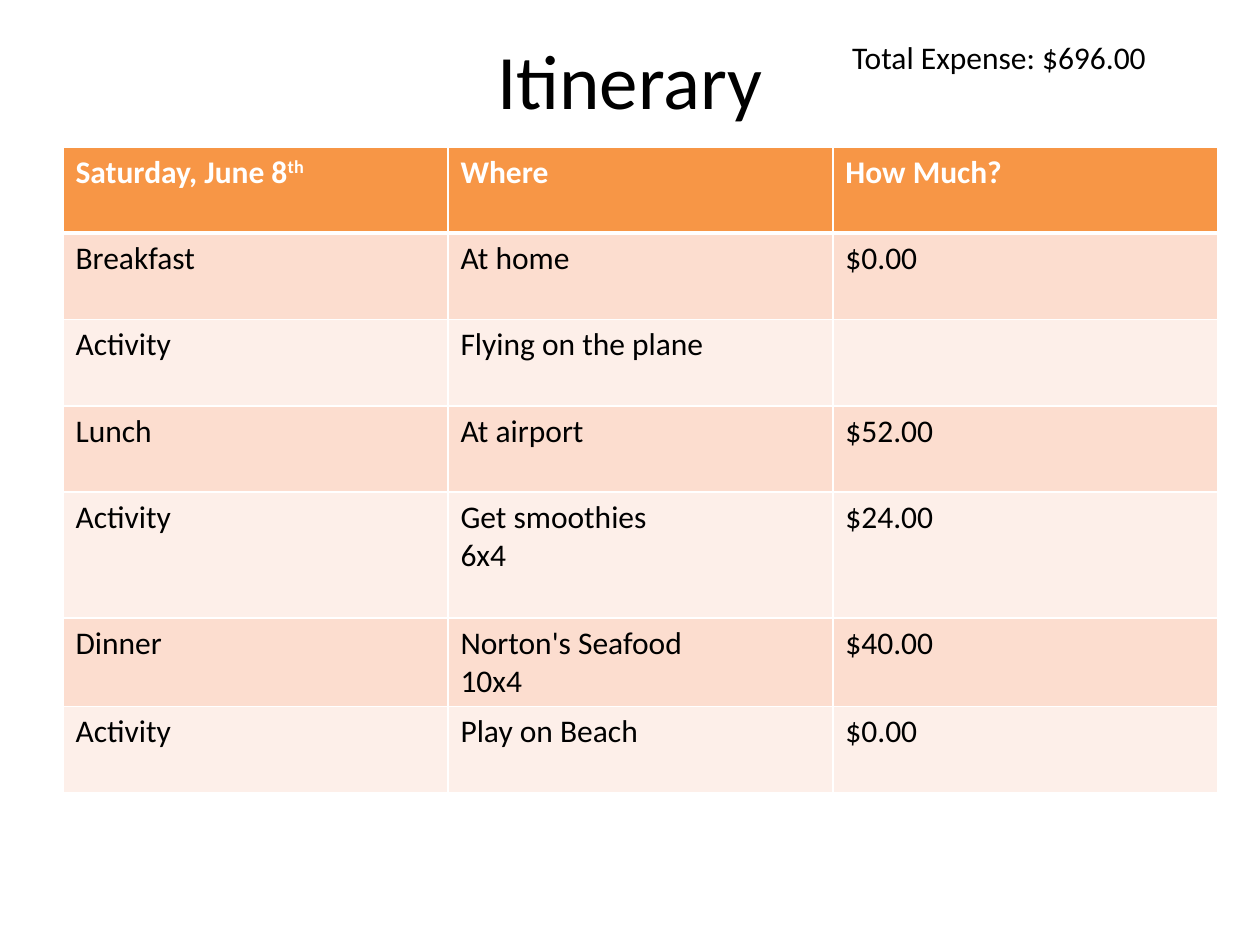
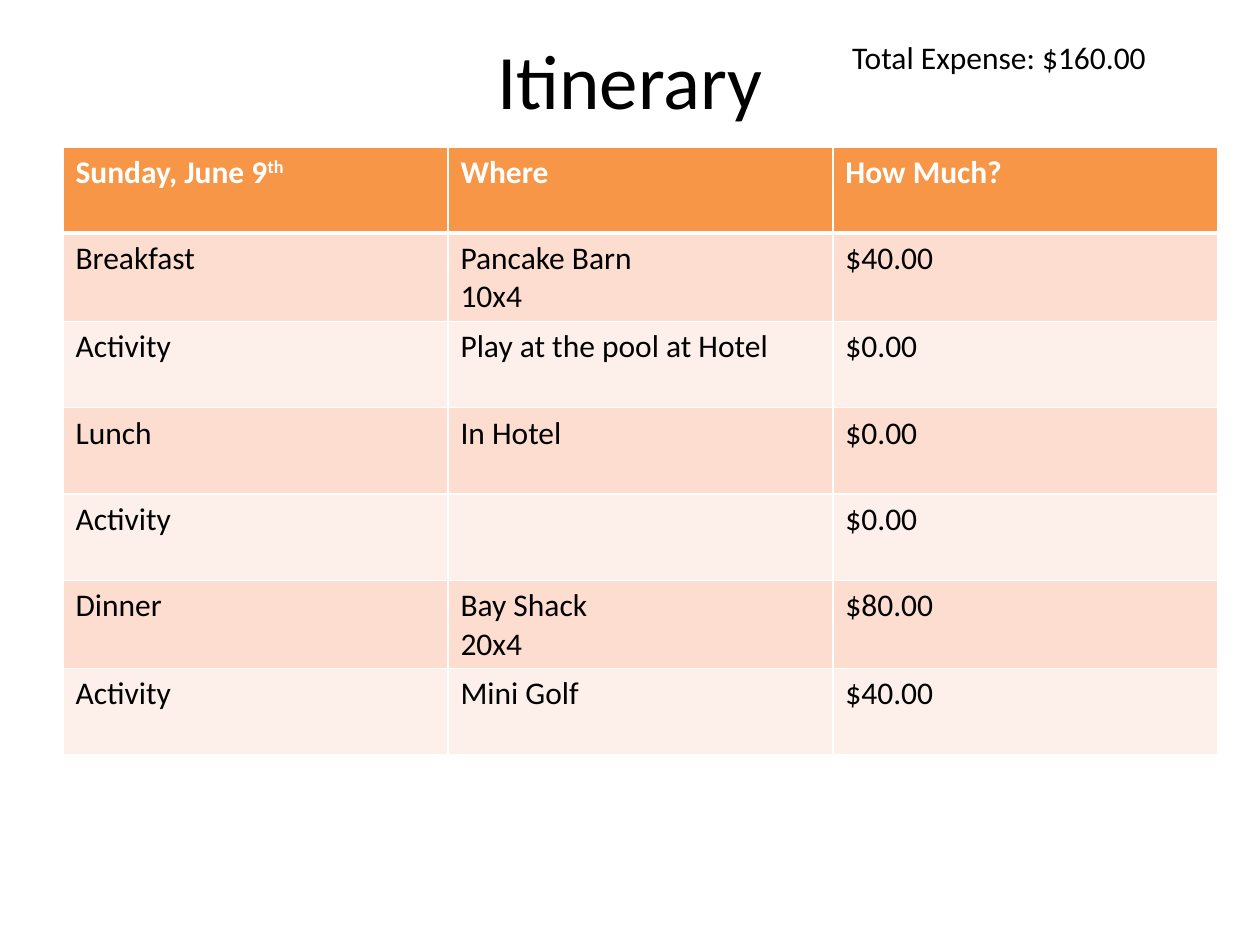
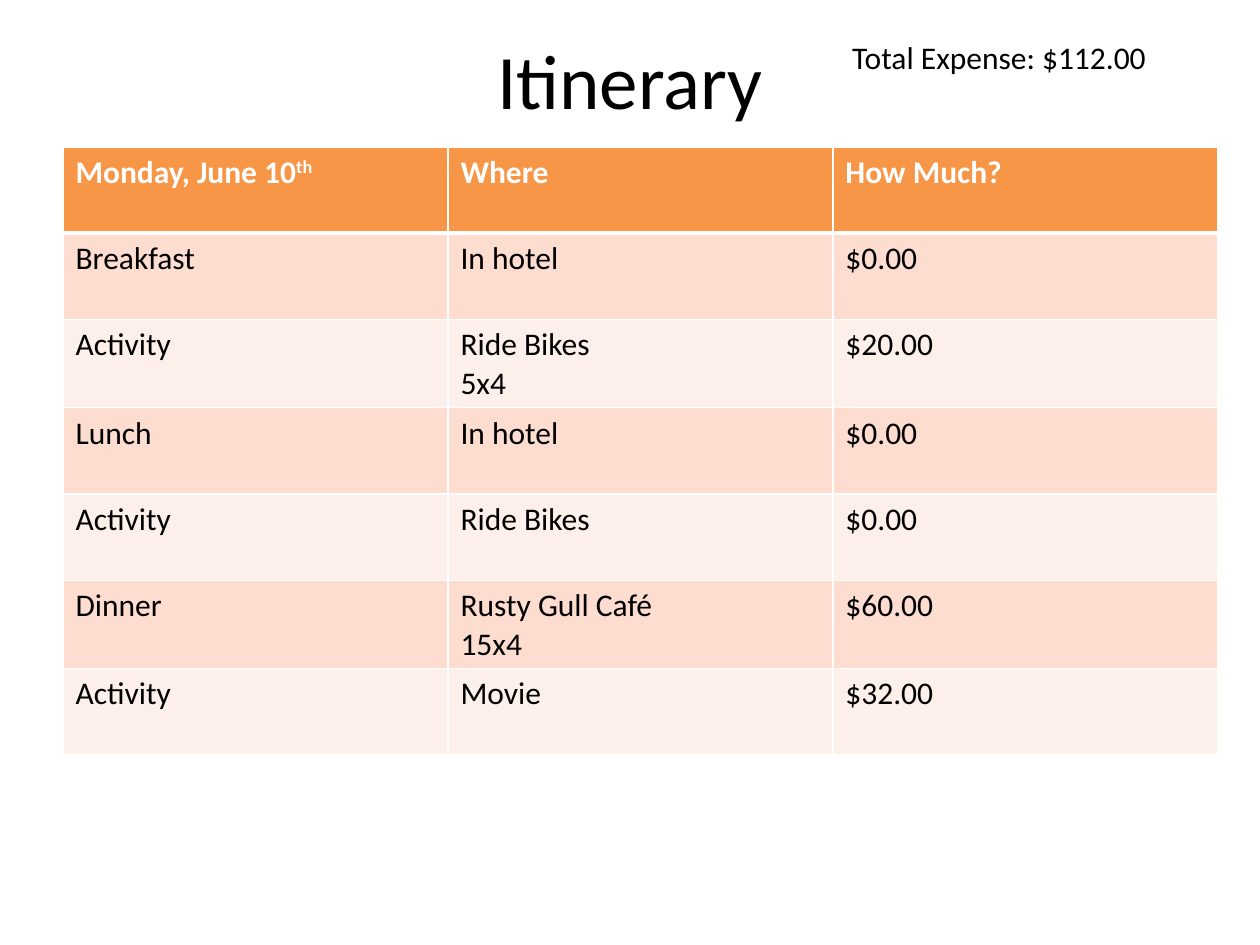
from dataclasses import dataclass

from lxml.etree import SubElement
from pptx import Presentation
from pptx.dml.color import RGBColor
from pptx.enum.text import MSO_ANCHOR, MSO_AUTO_SIZE, PP_ALIGN
from pptx.oxml.ns import qn
from pptx.util import Cm, Pt

FONT = "Calibri"
BLACK = "000000"
WHITE = "FFFFFF"
HEADER_FILL = "F79646"
BAND_FILLS = ("FCDDCF", "FDEFE9")
COLUMN_WIDTH = Cm(7.76)
ROW_HEIGHT = Cm(1.74)
TALL_ROW_HEIGHT = Cm(2.54)
THIN_LINE = Pt(1)
THICK_LINE = Pt(3)


@dataclass(frozen=True)
class Entry:
    """One table row; a line break in a text starts a new paragraph."""
    what: str
    where: str
    cost: str
    height: int = ROW_HEIGHT


@dataclass(frozen=True)
class Day:
    date: str
    total: str
    entries: tuple[Entry, ...]


DAYS = (
    Day("Saturday, June 8", "$696.00", (
        Entry("Breakfast", "At home", "$0.00"),
        Entry("Activity", "Flying on the plane", ""),
        Entry("Lunch", "At airport", "$52.00"),
        Entry("Activity", "Get smoothies\n6x4", "$24.00", TALL_ROW_HEIGHT),
        Entry("Dinner", "Norton's Seafood\n10x4", "$40.00"),
        Entry("Activity", "Play on Beach", "$0.00"),
    )),
    Day("Sunday, June 9", "$160.00", (
        Entry("Breakfast", "Pancake Barn\n10x4", "$40.00"),
        Entry("Activity", "Play at the pool at Hotel", "$0.00"),
        Entry("Lunch", "In Hotel", "$0.00"),
        Entry("Activity", "", "$0.00"),
        Entry("Dinner", "Bay Shack\n20x4", "$80.00"),
        Entry("Activity", "Mini Golf", "$40.00"),
    )),
    Day("Monday, June 10", "$112.00", (
        Entry("Breakfast", "In hotel", "$0.00"),
        Entry("Activity", "Ride Bikes\n5x4", "$20.00"),
        Entry("Lunch", "In hotel", "$0.00"),
        Entry("Activity", "Ride Bikes", "$0.00"),
        Entry("Dinner", "Rusty Gull Café\n15x4", "$60.00"),
        Entry("Activity", "Movie", "$32.00"),
    )),
)


def rgb(color: str) -> RGBColor:
    return RGBColor.from_string(color)


def add_run(paragraph, text: str, size: int = 18, color: str = BLACK, bold: bool = False):
    run = paragraph.add_run()
    run.text = text
    run.font.name = FONT
    run.font.size = Pt(size)
    run.font.bold = bold
    run.font.color.rgb = rgb(color)
    return run


def place(shape, left: float, top: float, width: float, height: float) -> None:
    """Position a shape, in centimetres."""
    shape.left, shape.top = Cm(left), Cm(top)
    shape.width, shape.height = Cm(width), Cm(height)


def add_border(cell, side: str, width: int) -> None:
    line = SubElement(cell._tc.get_or_add_tcPr(), qn(f"a:ln{side}"), w=str(width))
    SubElement(SubElement(line, qn("a:solidFill")), qn("a:srgbClr"), val=WHITE)


def style_cell(cell, row: int) -> None:
    """Give a cell its borders and band; a thick line parts header and body."""
    add_border(cell, "L", THIN_LINE)
    add_border(cell, "R", THIN_LINE)
    add_border(cell, "T", THICK_LINE if row == 1 else THIN_LINE)
    add_border(cell, "B", THICK_LINE if row == 0 else THIN_LINE)
    cell.fill.solid()
    cell.fill.fore_color.rgb = rgb(BAND_FILLS[(row - 1) % 2] if row else HEADER_FILL)


def fill_cell(cell, text: str, color: str = BLACK, bold: bool = False) -> None:
    for index, line in enumerate(text.split("\n")):
        frame = cell.text_frame
        paragraph = frame.add_paragraph() if index else frame.paragraphs[0]
        if line:
            add_run(paragraph, line, color=color, bold=bold)


def add_title(slide) -> None:
    title = slide.shapes.title
    place(title, 1.27, 0, 22.86, 3.18)
    title.text_frame.vertical_anchor = MSO_ANCHOR.MIDDLE
    paragraph = title.text_frame.paragraphs[0]
    paragraph.alignment = PP_ALIGN.CENTER
    add_run(paragraph, "Itinerary", size=44)


def add_total(slide, total: str) -> None:
    box = slide.shapes.add_textbox(Cm(16.93), Cm(0.64), Cm(7.82), Cm(1.03))
    box.text_frame.word_wrap = True
    box.text_frame.auto_size = MSO_AUTO_SIZE.SHAPE_TO_FIT_TEXT
    add_run(box.text_frame.paragraphs[0], f"Total Expense: {total}")


def add_schedule(slide, day: Day) -> None:
    header = Entry(day.date, "Where", "How Much?")
    rows = (header, *day.entries)
    height = sum(entry.height for entry in rows)
    table = slide.shapes.add_table(
        len(rows), 3, Cm(1.27), Cm(2.96), 3 * COLUMN_WIDTH, height).table
    for column in table.columns:
        column.width = COLUMN_WIDTH
    for row, entry in enumerate(rows):
        table.rows[row].height = entry.height
        is_header = entry is header
        for column, text in enumerate((entry.what, entry.where, entry.cost)):
            cell = table.cell(row, column)
            style_cell(cell, row)
            fill_cell(cell, text, WHITE if is_header else BLACK, is_header)
    date_paragraph = table.cell(0, 0).text_frame.paragraphs[0]
    suffix = add_run(date_paragraph, "th", color=WHITE, bold=True)
    suffix.font._element.set("baseline", "30000")


def main() -> None:
    presentation = Presentation()
    presentation.slide_width, presentation.slide_height = Cm(25.4), Cm(19.05)
    title_only = presentation.slide_layouts.get_by_name("Title Only")
    for day in DAYS:
        slide = presentation.slides.add_slide(title_only)
        add_title(slide)
        add_total(slide, day.total)
        add_schedule(slide, day)
    presentation.save("out.pptx")


if __name__ == "__main__":
    main()
